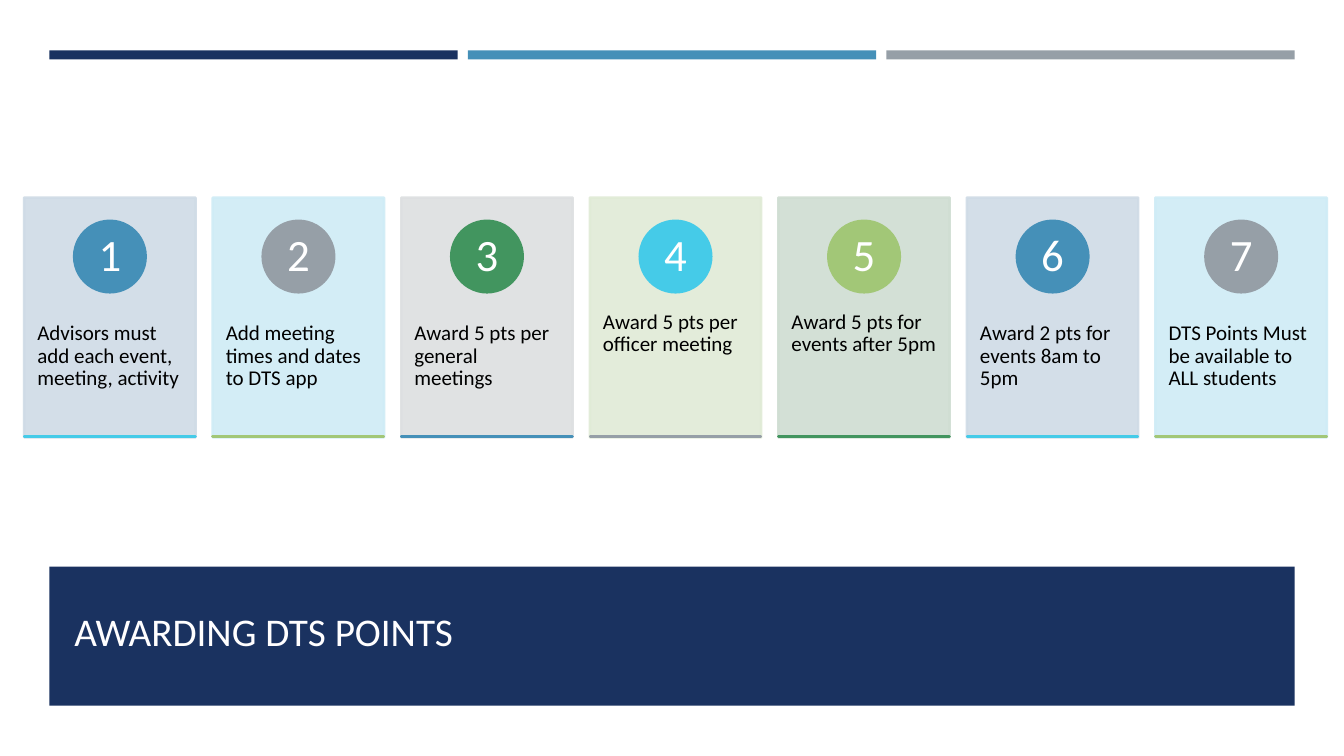
from dataclasses import dataclass

from lxml import etree
from pptx import Presentation
from pptx.dml.color import RGBColor
from pptx.enum.shapes import MSO_SHAPE
from pptx.enum.text import MSO_ANCHOR, PP_ALIGN
from pptx.oxml.ns import qn
from pptx.shapes.autoshape import Shape
from pptx.slide import Slide
from pptx.util import Inches, Pt

RECTANGLE, OVAL = MSO_SHAPE.RECTANGLE, MSO_SHAPE.OVAL
TOP, MIDDLE, BOTTOM = MSO_ANCHOR.TOP, MSO_ANCHOR.MIDDLE, MSO_ANCHOR.BOTTOM
LEFT, CENTER = PP_ALIGN.LEFT, PP_ALIGN.CENTER

NAVY = RGBColor(0x1A, 0x32, 0x60)
BLUE = RGBColor(0x45, 0x90, 0xB8)
GRAY = RGBColor(0x96, 0x9F, 0xA7)
GREEN = RGBColor(0x42, 0x95, 0x5F)
CYAN = RGBColor(0x45, 0xCB, 0xE8)
LIME = RGBColor(0xA2, 0xC7, 0x77)
PALE_BLUE = RGBColor(0xCF, 0xDB, 0xE6)
PALE_CYAN = RGBColor(0xCF, 0xEC, 0xF6)
PALE_GRAY = RGBColor(0xDD, 0xDF, 0xE1)
PALE_LIME = RGBColor(0xE0, 0xEB, 0xD6)
PALE_GREEN = RGBColor(0xCF, 0xDD, 0xD2)
WHITE = RGBColor(0xFF, 0xFF, 0xFF)
TITLE_WHITE = RGBColor(0xFF, 0xFE, 0xFF)
BLACK = RGBColor(0x00, 0x00, 0x00)

FONT = "Calibri"
MARGIN = 0.49
BAR_WIDTH, BAR_PITCH = 4.05, 4.15
CARD_LEFT, CARD_TOP, CARD_PITCH = 0.24, 1.96, 1.87
CARD_WIDTH, CARD_HEIGHT = 1.7, 2.38
BADGE_SIZE, NUMBER_SIZE = 0.71, 0.5


@dataclass(frozen=True)
class Box:
    left: float
    top: float
    width: float
    height: float


@dataclass(frozen=True)
class Palette:
    card: RGBColor
    badge: RGBColor
    underline: RGBColor


@dataclass(frozen=True)
class TextStyle:
    size: float
    color: RGBColor
    anchor: MSO_ANCHOR = TOP
    align: PP_ALIGN = LEFT
    inset_x: float = 0.1
    inset_y: float = 0.05
    line_spacing: float = 0.9


TITLE = TextStyle(28, TITLE_WHITE, anchor=BOTTOM)
STEP = TextStyle(15, BLACK, inset_x=0.13, inset_y=0.36)
NUMBER = TextStyle(32, WHITE, MIDDLE, CENTER, 0.06, 0.01)

PALETTES = [
    Palette(PALE_BLUE, BLUE, CYAN),
    Palette(PALE_CYAN, GRAY, LIME),
    Palette(PALE_GRAY, GREEN, BLUE),
    Palette(PALE_LIME, CYAN, GRAY),
    Palette(PALE_GREEN, LIME, GREEN),
]
STEPS = [
    "Advisors must add each event, meeting, activity",
    "Add meeting times and dates to DTS app",
    "Award 5 pts per general meetings",
    "Award 5 pts per officer meeting",
    "Award 5 pts for events after 5pm",
    "Award 2 pts for events 8am to 5pm",
    "DTS Points Must be available to ALL students",
]


def add_filled(slide: Slide, kind: MSO_SHAPE, box: Box, color: RGBColor,
               outlined: bool = False) -> Shape:
    shape = slide.shapes.add_shape(kind, Inches(box.left), Inches(box.top),
                                   Inches(box.width), Inches(box.height))
    shape.shadow.inherit = False
    shape.fill.solid()
    shape.fill.fore_color.rgb = color
    if outlined:
        shape.line.color.rgb = color
        shape.line.width = Pt(1.75)
    else:
        shape.line.fill.background()
    return shape


def set_opacity(shape: Shape, percent: int) -> None:
    for color in shape.element.spPr.iter(qn("a:srgbClr")):
        etree.SubElement(color, qn("a:alpha"), val=str(percent * 1000))


def add_text(slide: Slide, box: Box, text: str, style: TextStyle) -> None:
    textbox = slide.shapes.add_textbox(Inches(box.left), Inches(box.top),
                                       Inches(box.width), Inches(box.height))
    frame = textbox.text_frame
    frame.word_wrap = True
    frame.vertical_anchor = style.anchor
    frame.margin_left = frame.margin_right = Inches(style.inset_x)
    frame.margin_top = frame.margin_bottom = Inches(style.inset_y)
    paragraph = frame.paragraphs[0]
    paragraph.text = text
    paragraph.alignment = style.align
    paragraph.line_spacing = style.line_spacing
    paragraph.font.name = FONT
    paragraph.font.size = Pt(style.size)
    paragraph.font.color.rgb = style.color


def add_step(slide: Slide, index: int, text: str, palette: Palette) -> None:
    left = CARD_LEFT + index * CARD_PITCH
    center = left + CARD_WIDTH / 2
    card = add_filled(slide, RECTANGLE, Box(left, CARD_TOP, CARD_WIDTH, CARD_HEIGHT),
                      palette.card, outlined=True)
    set_opacity(card, 90)
    add_text(slide, Box(left, 2.86, CARD_WIDTH, 1.43), text, STEP)
    add_filled(slide, OVAL, Box(center - BADGE_SIZE / 2, 2.19, BADGE_SIZE, BADGE_SIZE),
               palette.badge, outlined=True)
    add_text(slide, Box(center - NUMBER_SIZE / 2, 2.3, NUMBER_SIZE, NUMBER_SIZE),
             str(index + 1), NUMBER)
    add_filled(slide, RECTANGLE, Box(left, 4.33, CARD_WIDTH, 0),
               palette.underline, outlined=True)


def main() -> None:
    presentation = Presentation()
    presentation.slide_width = Inches(13.33)
    presentation.slide_height = Inches(7.5)
    slide = presentation.slides.add_slide(presentation.slide_layouts[6])

    for index, color in enumerate((NAVY, BLUE, GRAY)):
        add_filled(slide, RECTANGLE,
                   Box(MARGIN + index * BAR_PITCH, 0.5, BAR_WIDTH, 0.09), color)

    add_filled(slide, RECTANGLE, Box(MARGIN, 5.62, 12.35, 1.38), NAVY)
    add_text(slide, Box(0.64, 5.76, 12.06, 0.79), "AWARDING DTS POINTS", TITLE)

    for index, text in enumerate(STEPS):
        add_step(slide, index, text, PALETTES[index % len(PALETTES)])

    presentation.save("out.pptx")


if __name__ == "__main__":
    main()
